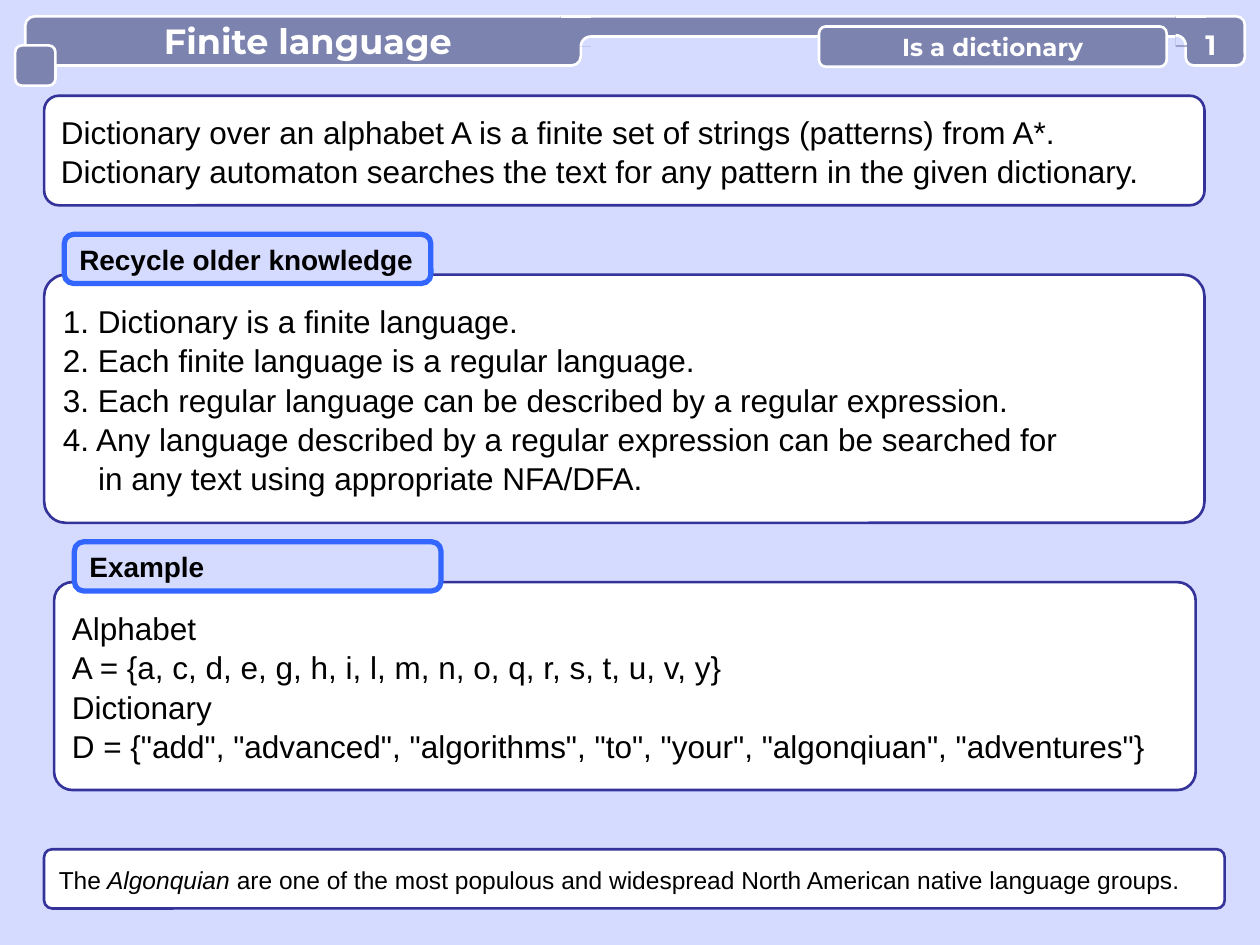
import math

import pptx
import pptx.dml.color
import pptx.enum.shapes
import pptx.enum.text
import pptx.oxml
import pptx.oxml.ns
import pptx.util

Inches = pptx.util.Inches
RGBColor = pptx.dml.color.RGBColor
MSO_SHAPE = pptx.enum.shapes.MSO_SHAPE
PP_ALIGN = pptx.enum.text.PP_ALIGN

BACKGROUND = RGBColor(0xD5, 0xDA, 0xFF)
WHITE = RGBColor(0xFF, 0xFF, 0xFF)
BLACK = RGBColor(0x00, 0x00, 0x00)
BAR = RGBColor(0x7D, 0x83, 0xAF)
NAVY = RGBColor(0x33, 0x33, 0x99)
BLUE = RGBColor(0x33, 0x66, 0xFF)


def add_run(p, text, size=18, font="Arial", color=BLACK, bold=False, italic=False):
    r = p.add_run()
    r.text = text
    r.font.size = pptx.util.Pt(size)
    r.font.name = font
    r.font.color.rgb = color
    r.font.bold = bold
    r.font.italic = italic


class SlideBuilder:
    def __init__(self, slide):
        self.s = slide
        fill = slide.background.fill
        fill.solid()
        fill.fore_color.rgb = BACKGROUND

    def style(self, sp, fill=None, line=None, width=1.5):
        sp.shadow.inherit = False
        if fill is None:
            sp.fill.background()
        else:
            sp.fill.solid()
            sp.fill.fore_color.rgb = fill
        if line is None:
            sp.line.fill.background()
        else:
            sp.line.color.rgb = line
            sp.line.width = pptx.util.Pt(width)
        return sp

    def set_text(self, sp, lines, align=PP_ALIGN.LEFT, spacing=None, **fmt):
        tf = sp.text_frame
        tf.word_wrap = True
        tf.vertical_anchor = pptx.enum.text.MSO_ANCHOR.MIDDLE
        for i, text in enumerate(lines):
            p = tf.add_paragraph() if i else tf.paragraphs[0]
            p.alignment = align
            p.line_spacing = spacing
            add_run(p, text, **fmt)
        return tf

    def box(self, x, y, w, h, radius=None, fill=BAR, line=WHITE, width=1.5):
        kind = MSO_SHAPE.RECTANGLE if radius is None else MSO_SHAPE.ROUNDED_RECTANGLE
        sp = self.s.shapes.add_shape(kind, Inches(x), Inches(y), Inches(w), Inches(h))
        if radius is not None:
            sp.adjustments[0] = radius
        return self.style(sp, fill, line, width)

    def panel(self, x, y, w, h, radius, lines, **fmt):
        sp = self.box(x, y, w, h, radius, WHITE, NAVY)
        return self.set_text(sp, lines, spacing=1.04, **fmt)

    def tab(self, x, y, text):
        sp = self.box(x, y, 2.91, 0.39, 0.188, BACKGROUND, BLUE, 3)
        self.set_text(sp, [text], size=16, bold=True)

    def bar_label(self, sp, text, size):
        return self.set_text(sp, [text], PP_ALIGN.CENTER, size=size,
                             font="Montserrat", color=WHITE, bold=True)

    def line(self, x1, y1, x2, y2):
        cn = self.s.shapes.add_connector(
            pptx.enum.shapes.MSO_CONNECTOR.STRAIGHT,
            Inches(x1), Inches(y1), Inches(x2), Inches(y2))
        cn.line.color.rgb = WHITE
        cn.line.width = pptx.util.Pt(1.5)
        cn._element.spPr.append(pptx.oxml.parse_xml(
            "<a:effectLst %s/>" % pptx.oxml.ns.nsdecls("a")))

    def outline(self, points, closed, **style):
        pts = [(Inches(x), Inches(y)) for x, y in points]
        fb = self.s.shapes.build_freeform(*pts[0], scale=1.0)
        fb.add_line_segments(pts[1:], close=closed)
        self.style(fb.convert_to_shape(), **style)

    def fillet(self, x, y, side, r=0.08, steps=12):
        angles = [math.pi / 2 * i / steps for i in range(steps + 1)]
        arc = [(x + side * r * math.sin(a), y + r - r * math.cos(a)) for a in angles]
        self.outline(arc + [(x, y + r)], True, fill=BACKGROUND)
        self.outline(arc, False, line=WHITE)

    def joint(self, x, fillet_x, fillet_y, side):
        self.box(x, 0.13, 0.24, 0.24, line=None)
        self.line(x, 0.13, x + 0.24, 0.13)
        self.fillet(fillet_x, fillet_y, side)


def main():
    prs = pptx.Presentation()
    prs.slide_width, prs.slide_height = Inches(10), Inches(7.5)
    s = SlideBuilder(prs.slides.add_slide(prs.slide_layouts[6]))

    s.panel(0.35, 0.76, 9.21, 0.87, 0.135, [
        "Dictionary over an alphabet A is a finite set of strings (patterns) from A*.",
        "Dictionary automaton searches the text for any pattern in the given dictionary.",
    ])
    tf = s.panel(0.35, 2.18, 9.21, 1.97, 0.088, [
        "1. Dictionary is a finite language.",
        "2. Each finite language is a regular language.",
        "3. Each regular language can be described by a regular expression.",
        "4. Any language described by a regular expression can be searched for",
        "in any text using appropriate NFA/DFA.",
    ])
    tf.paragraphs[-1]._p.get_or_add_pPr().set("marL", str(Inches(0.28)))
    s.tab(0.51, 1.86, "Recycle older knowledge")

    s.bar_label(s.box(0.2, 0.13, 4.41, 0.39, 0.188), " Finite language", 20)
    s.box(4.61, 0.13, 4.88, 0.16, 0.5)
    s.joint(4.45, 4.69, 0.29, -1)
    s.box(0.12, 0.36, 0.32, 0.32, 0.17)
    s.box(9.41, 0.13, 0.47, 0.39, 0.17)
    s.joint(9.33, 9.33, 0.28, 1)
    s.bar_label(s.box(6.5, 0.21, 2.76, 0.32, 0.17), "Is a dictionary", 14)
    number = s.s.shapes.add_textbox(Inches(9.41), Inches(0.22), Inches(0.4), Inches(0.27))
    tf = s.bar_label(number, "1", 16)
    tf.margin_left = tf.margin_right = tf.margin_top = tf.margin_bottom = 0

    s.panel(0.43, 4.62, 9.06, 1.65, 0.088, [
        "Alphabet",
        "A = {a, c, d, e, g, h, i, l, m, n, o, q, r, s, t, u, v, y}",
        "Dictionary",
        'D = {"add", "advanced", "algorithms", "to", "your", "algonqiuan", "adventures"}',
    ])
    s.tab(0.59, 4.3, "Example")

    tf = s.panel(0.35, 6.74, 9.37, 0.47, 0.135, ["The"], size=14)
    p = tf.paragraphs[0]
    add_run(p, " Algonquian", size=14, italic=True)
    add_run(p, " are one of the most populous and widespread North American "
               "native language groups.", size=14)

    prs.save("out.pptx")


if __name__ == "__main__":
    main()
